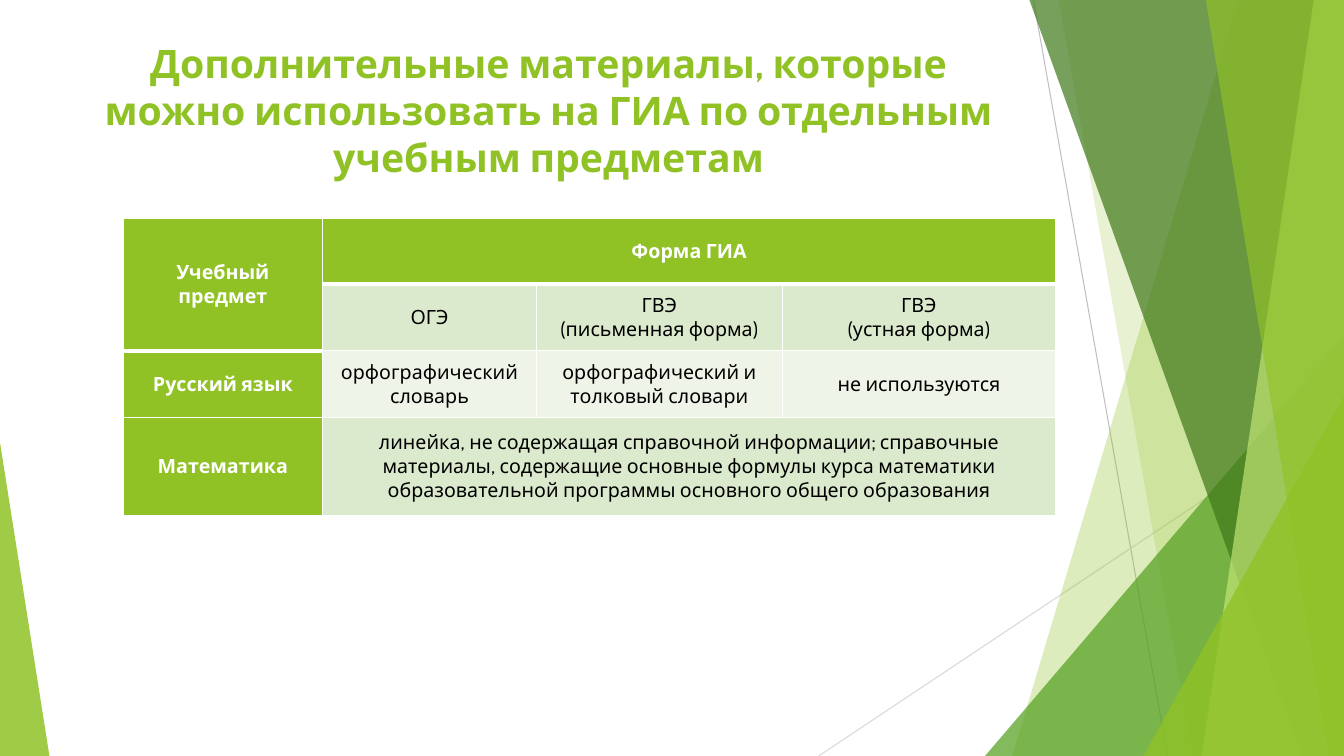
"""Builds a slide with a table of the extra materials allowed at the state exam."""
from lxml import etree
from pptx import Presentation
from pptx.dml.color import RGBColor
from pptx.enum.shapes import MSO_CONNECTOR, MSO_SHAPE
from pptx.enum.text import MSO_ANCHOR, MSO_AUTO_SIZE, PP_ALIGN
from pptx.oxml.ns import qn
from pptx.util import Inches, Pt

LINE = MSO_CONNECTOR.STRAIGHT
TRIANGLE = MSO_SHAPE.ISOSCELES_TRIANGLE
CENTER = PP_ALIGN.CENTER
TOP, MIDDLE = MSO_ANCHOR.TOP, MSO_ANCHOR.MIDDLE
FONT = "Cabin"
W, H = 13.33, 7.5
COLORS = {"lime": "90C226", "green": "54A021", "dark": "3F7819", "light": "C0E474",
          "odd": "DBE9CD", "even": "EEF4E8", "white": "FFFFFF", "black": "000000",
          "grey": "BFBFBF", "silver": "D9D9D9"}


def paint(sp, color, opacity):
    """Fill a shape with a translucent colour, without outline or shadow."""
    sp.shadow.inherit = False
    sp.line.fill.background()
    sp.fill.solid()
    sp.fill.fore_color.rgb = RGBColor.from_string(COLORS[color])
    clr = sp.fill._xPr.find(qn("a:solidFill"))[0]
    etree.SubElement(clr, qn("a:alpha"), val=str(opacity * 1000))


def format_text(tf, size, color, bold):
    """Centre the paragraphs and format their runs."""
    for p in tf.paragraphs:
        p.alignment = CENTER
        for r in p.runs:
            r.font.name = FONT
            r.font.size = Pt(size)
            r.font.bold = bold
            r.font.color.rgb = RGBColor.from_string(COLORS[color])


prs = Presentation()
prs.slide_width, prs.slide_height = Inches(W), Inches(H)
s = prs.slides.add_slide(prs.slide_layouts[5])

for x1, y1, x2, y2, color in [(10.25, 0, 11.58, H, "grey"), (W, 4.03, 8.12, H, "silver")]:
    ray = s.shapes.add_connector(LINE, Inches(x1), Inches(y1), Inches(x2), Inches(y2))
    ray.line.color.rgb = RGBColor.from_string(COLORS[color])
    ray.line.width = Pt(0.75)
    etree.SubElement(ray._element.spPr, qn("a:effectLst"))

facets = [
    ("band", 12.28, 10.04, "lime", 30),
    ("band", 10.5, 11.83, "lime", 20),
    ("corner", 9.77, 3.33, "green", 72),
    ("band", 10.21, 12.91, "dark", 70),
    ("band", 13.03, 11.92, "light", 70),
    ("band", 11.96, 13.18, "lime", 65),
    ("corner", 11.34, 3.93, "lime", 80),
]
for kind, left, other, color, opacity in facets:
    if kind == "band":
        fb = s.shapes.build_freeform(Inches(left), 0)
        fb.add_line_segments([(Inches(x), Inches(y)) for x, y in [(W, 0), (W, H), (other, H)]])
        sp = fb.convert_to_shape()
    else:
        sp = s.shapes.add_shape(TRIANGLE, Inches(left), Inches(other),
                                Inches(W - left), Inches(H - other))
        sp.adjustments[0] = 1
    paint(sp, color, opacity)

wedge = s.shapes.add_shape(TRIANGLE, 0, Inches(4.39), Inches(0.49), Inches(H - 4.39))
wedge.adjustments[0] = 0
paint(wedge, "lime", 85)

title = s.shapes.title
title.left, title.top, title.width, title.height = map(Inches, (0.74, 0.34, 9.4, 1.44))
tf = title.text_frame
tf.text = "Дополнительные материалы, которые можно использовать на ГИА по отдельным учебным предметам"
tf.word_wrap = True
tf.auto_size = MSO_AUTO_SIZE.NONE
tf.vertical_anchor = TOP
format_text(tf, 28, "lime", True)

rows = [
    ["Учебный предмет", "Форма ГИА", "", ""],
    ["", "ОГЭ", "ГВЭ\n(письменная форма)", "ГВЭ\n(устная форма)"],
    ["Русский язык", "орфографический словарь", "орфографический и толковый словари",
     "не используются"],
    ["Математика", "линейка, не содержащая справочной информации; справочные материалы, "
     "содержащие основные формулы курса математики образовательной программы основного "
     "общего образования", "", ""],
]
col_widths = [1.98, 2.12, 2.44, 2.71]
row_heights = [0.65, 0.66, 0.66, 0.98]
table = s.shapes.add_table(len(rows), len(col_widths), Inches(1.22), Inches(2.17),
                           Inches(sum(col_widths)), Inches(sum(row_heights))).table
for col, width in zip(table.columns, col_widths):
    col.width = Inches(width)
for row, height in zip(table.rows, row_heights):
    row.height = Inches(height)

for i, texts in enumerate(rows):
    for j, text in enumerate(texts):
        cell = table.cell(i, j)
        cell.text = text
        cell.vertical_anchor = MIDDLE
        cell.margin_left = cell.margin_right = Inches(0.07)
        cell.margin_top = cell.margin_bottom = 0
        header = i == 0 or j == 0
        format_text(cell.text_frame, 14, "white" if header else "black", header)

        head_end = 1 if j == 0 else 0
        edges = {"lnL": 1, "lnR": 1, "lnT": 3 if i == head_end + 1 else 1,
                 "lnB": 3 if i <= head_end else 1}
        tcPr = cell._tc.get_or_add_tcPr()
        for edge, width in edges.items():
            ln = etree.SubElement(tcPr, qn(f"a:{edge}"), w=str(Pt(width)))
            fill = etree.SubElement(ln, qn("a:solidFill"))
            etree.SubElement(fill, qn("a:srgbClr"), val=COLORS["white"])

        cell.fill.solid()
        shade = "lime" if header else "odd" if i % 2 else "even"
        cell.fill.fore_color.rgb = RGBColor.from_string(COLORS[shade])

for start, end in [((0, 0), (1, 0)), ((0, 1), (0, 3)), ((3, 1), (3, 3))]:
    table.cell(*start).merge(table.cell(*end))

prs.save("out.pptx")
